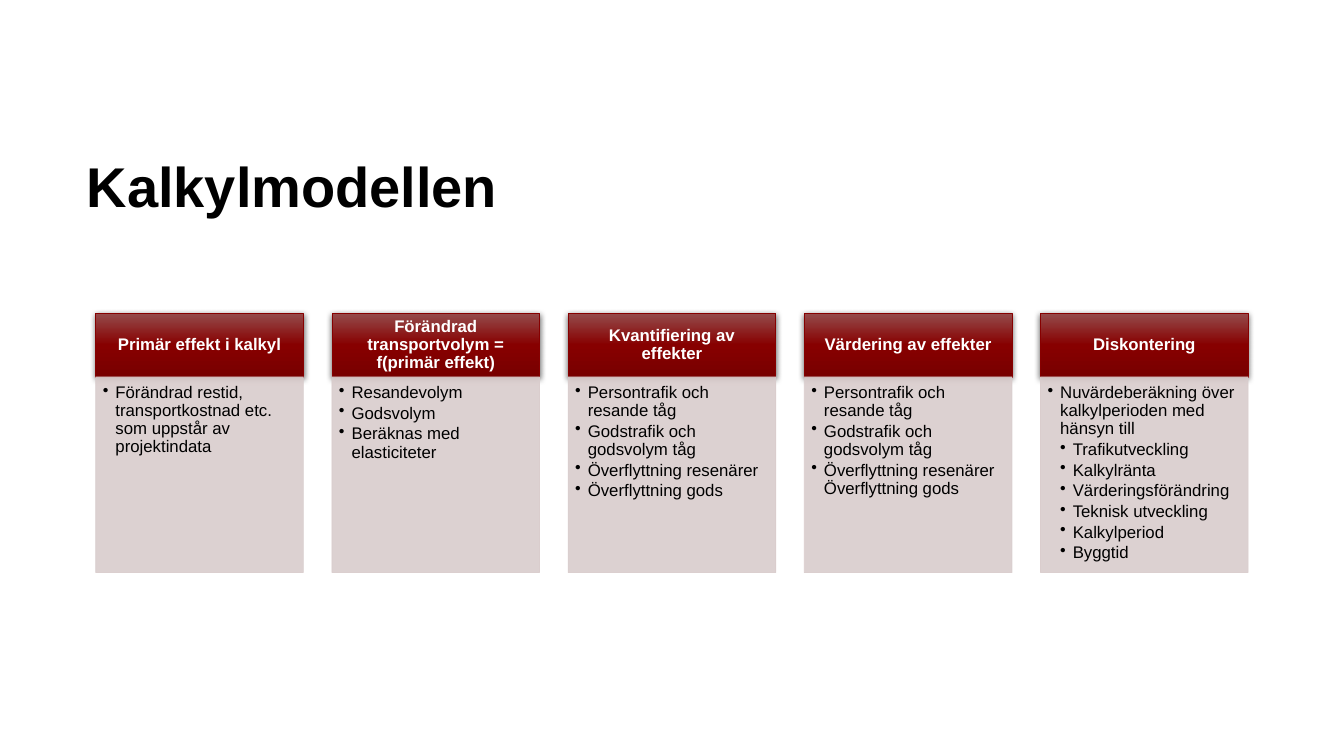
from dataclasses import dataclass

from pptx import Presentation
from pptx.dml.color import RGBColor
from pptx.enum.shapes import MSO_SHAPE
from pptx.enum.text import MSO_ANCHOR, MSO_AUTO_SIZE, PP_ALIGN
from pptx.oxml.ns import qn
from pptx.util import Inches, Pt
from lxml.etree import SubElement


@dataclass(frozen=True)
class Theme:
    font: str = "Arial"
    title_size: int = 40
    text_size: int = 12
    text: str = "000000"
    header_text: str = "FFFFFF"
    header_line: str = "870000"
    header_gradient: tuple = ((0, "944B4B"), (50, "870000"), (100, "780000"))
    panel: str = "D9CCCC"
    panel_opacity: int = 90
    shadow: str = "000000"
    shadow_opacity: int = 63


theme = Theme()


def add_color(parent, color, opacity=100):
    element = SubElement(parent, qn("a:srgbClr"), val=color)
    if opacity < 100:
        SubElement(element, qn("a:alpha"), val=str(opacity * 1000))


def write_text(frame, items, *, size=theme.text_size, color=theme.text, bold=False,
               align=PP_ALIGN.LEFT, anchor=MSO_ANCHOR.TOP, insets=(0.1, 0.05, 0.1, 0.05),
               bullets=False, space_after=0):
    """Fill a frame with (level, text) items; level sets the bullet indent."""
    frame.word_wrap = True
    frame.auto_size = MSO_AUTO_SIZE.NONE
    frame.vertical_anchor = anchor
    (frame.margin_left, frame.margin_top,
     frame.margin_right, frame.margin_bottom) = map(Inches, insets)
    for index, (level, text) in enumerate(items):
        paragraph = frame.add_paragraph() if index else frame.paragraphs[0]
        paragraph.alignment = align
        paragraph.line_spacing = 0.9
        paragraph.space_before = Pt(0)
        paragraph.space_after = Pt(space_after)
        if bullets:
            paragraph.level = level
            properties = paragraph._p.get_or_add_pPr()
            properties.set("marL", str(Inches(0.125 * level)))
            properties.set("indent", str(-Inches(0.125)))
            SubElement(properties, qn("a:buChar"), char="•")
        run = paragraph.add_run()
        run.text = text
        run.font.name = theme.font
        run.font.size = Pt(size)
        run.font.bold = bold
        run.font.color.rgb = RGBColor.from_string(color)


columns = [
    ("Primär effekt i kalkyl",
     [(1, "Förändrad restid, transportkostnad etc. som uppstår av projektindata")]),
    ("Förändrad transportvolym = f(primär effekt)",
     [(1, "Resandevolym"), (1, "Godsvolym"), (1, "Beräknas med elasticiteter")]),
    ("Kvantifiering av effekter",
     [(1, "Persontrafik och resande tåg"), (1, "Godstrafik och godsvolym tåg"),
      (1, "Överflyttning resenärer"), (1, "Överflyttning gods")]),
    ("Värdering av effekter",
     [(1, "Persontrafik och resande tåg"), (1, "Godstrafik och godsvolym tåg"),
      (1, "Överflyttning resenärer Överflyttning gods")]),
    ("Diskontering",
     [(1, "Nuvärdeberäkning över kalkylperioden med hänsyn till"),
      (2, "Trafikutveckling"), (2, "Kalkylränta"), (2, "Värderingsförändring"),
      (2, "Teknisk utveckling"), (2, "Kalkylperiod"), (2, "Byggtid")]),
]

presentation = Presentation()
presentation.slide_width = Inches(13.33)
presentation.slide_height = Inches(7.5)
slide = presentation.slides.add_slide(presentation.slide_layouts[5])

title = slide.shapes.title
title.left, title.top, title.width, title.height = map(Inches, (0.76, 1.39, 11.81, 0.98))
write_text(title.text_frame, [(0, "Kalkylmodellen")], size=theme.title_size,
           bold=True, anchor=MSO_ANCHOR.MIDDLE)

first_left, last_left = 0.95, 10.32
pitch = (last_left - first_left) / (len(columns) - 1)
width = Inches(2.06)
header_top, header_height, panel_height = Inches(3.11), Inches(0.63), Inches(1.94)

for index, (heading, points) in enumerate(columns):
    left = Inches(first_left + index * pitch)
    header = slide.shapes.add_shape(MSO_SHAPE.RECTANGLE, left, header_top,
                                    width, header_height)
    panel = slide.shapes.add_shape(MSO_SHAPE.RECTANGLE, left, header_top + header_height,
                                   width, panel_height)
    for shape, line_color in ((header, theme.header_line), (panel, theme.panel)):
        shape.shadow.inherit = False
        shape.line.width = Pt(0.5)
        shape.line.color.rgb = RGBColor.from_string(line_color)

    header.fill.gradient()
    header.fill.gradient_angle = 270
    stops = header._element.spPr.find(f"{qn('a:gradFill')}/{qn('a:gsLst')}")
    for stop in list(stops):
        stops.remove(stop)
    for position, color in theme.header_gradient:
        add_color(SubElement(stops, qn("a:gs"), pos=str(position * 1000)), color)
    effects = header._element.spPr.find(qn("a:effectLst"))
    shadow = SubElement(effects, qn("a:outerShdw"), blurRad=str(Pt(4.5)),
                        dist=str(Pt(1.5)), dir="5400000", rotWithShape="0")
    add_color(shadow, theme.shadow, theme.shadow_opacity)
    write_text(header.text_frame, [(0, heading)], color=theme.header_text, bold=True,
               align=PP_ALIGN.CENTER, anchor=MSO_ANCHOR.MIDDLE,
               insets=(0.09, 0.05, 0.09, 0.05))

    panel.fill.solid()
    panel.fill.fore_color.rgb = RGBColor.from_string(theme.panel)
    for color in panel._element.spPr.iter(qn("a:srgbClr")):
        SubElement(color, qn("a:alpha"), val=str(theme.panel_opacity * 1000))
    write_text(panel.text_frame, points, bullets=True, space_after=1.8,
               insets=(0.07, 0.07, 0.09, 0.1))

presentation.save("out.pptx")
